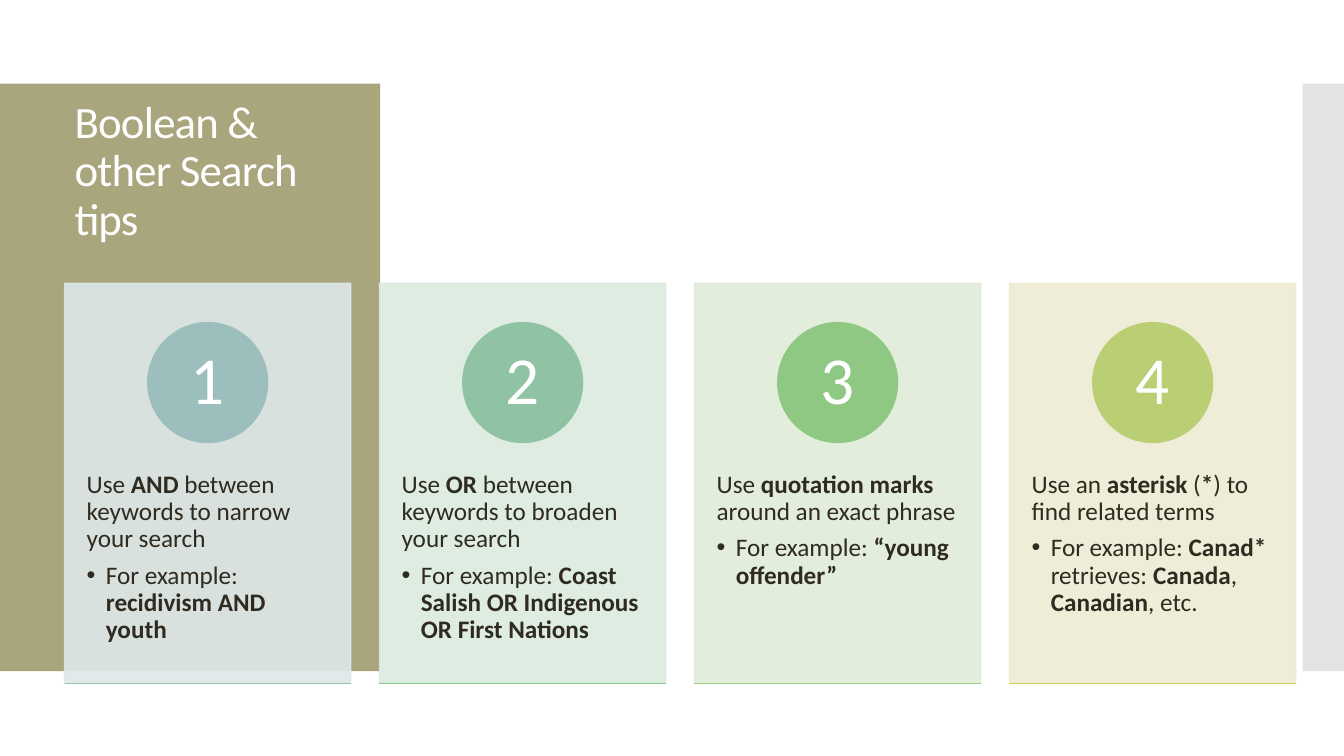
"""Build a slide of four numbered search tips beside a coloured title band."""
from lxml.etree import SubElement
from pptx import Presentation
from pptx.dml.color import RGBColor
from pptx.enum.shapes import MSO_CONNECTOR, MSO_SHAPE
from pptx.enum.text import MSO_ANCHOR, MSO_AUTO_SIZE, PP_ALIGN
from pptx.oxml.ns import qn
from pptx.util import Inches, Pt


def paint(shape, tint, alpha=100, edge=0.85):
    """Fill and outline a shape in one colour."""
    shape.shadow.inherit = False
    shape.fill.solid()
    shape.fill.fore_color.rgb = RGBColor.from_string(tint)
    if edge:
        shape.line.color.rgb = RGBColor.from_string(tint)
        shape.line.width = Pt(edge)
    else:
        shape.line.fill.background()
    if alpha < 100:
        for node in shape.element.spPr.iter(qn("a:srgbClr")):
            SubElement(node, qn("a:alpha"), val=str(alpha * 1000))


def write(para, text, look, tint):
    """Add runs to a paragraph; parts between underscores are bold."""
    para.line_spacing = 0.9
    for order, part in enumerate(text.split("_")):
        run = para.add_run()
        run.text = part
        for key, value in look.items():
            setattr(run.font, key, value)
        run.font.bold = order % 2 == 1
        run.font.color.rgb = RGBColor.from_string(tint)


deck = Presentation()
deck.slide_width, deck.slide_height = Inches(13.33), Inches(7.5)
slide = deck.slides.add_slide(deck.slide_layouts[5])
shapes = slide.shapes

head_look = {"name": "Calibri", "size": Pt(32)}
body_look = {"name": "Calibri", "size": Pt(18)}
mark_look = {"name": "Calibri", "size": Pt(48)}
body_box = {"word_wrap": True, "margin_left": Inches(0.22), "margin_right": Inches(0.22),
            "margin_top": Inches(0.36), "margin_bottom": Inches(0.36)}
mark_box = {"word_wrap": False, "vertical_anchor": MSO_ANCHOR.MIDDLE,
            "margin_top": Inches(0.01), "margin_bottom": Inches(0.01)}
head_box = {"word_wrap": True, "vertical_anchor": MSO_ANCHOR.MIDDLE,
            "auto_size": MSO_AUTO_SIZE.NONE}

for left, wide, tint, alpha in [(0, 3.77, "A9A57C", 100), (12.92, 0.41, "C8C8C8", 50)]:
    band = shapes.add_shape(MSO_SHAPE.RECTANGLE, Inches(left), Inches(0.83),
                            Inches(wide), Inches(5.83))
    paint(band, tint, alpha, 0)

title = shapes.title
shapes.element.append(title.element)
place = {"left": 0.64, "top": 0.9, "width": 2.53, "height": 1.62}
for key, value in place.items():
    setattr(title, key, Inches(value))
for key, value in head_box.items():
    setattr(title.text_frame, key, value)
head = title.text_frame.paragraphs[0]
head.alignment = PP_ALIGN.LEFT
write(head, "Boolean & other Search tips", head_look, "FFFEFF")
head.runs[0].font.element.set("spc", "-60") if hasattr(head.runs[0].font, "element") else \
    head.runs[0]._r.get_or_add_rPr().set("spc", "-60")

tips = [
    ("DEE8E8", "9CBEBD", "96C0B3", "Use _AND_ between keywords to narrow your search",
     "For example: _recidivism AND youth_"),
    ("DBEADF", "8FC3A3", "89C58E", "Use _OR_ between keywords to broaden your search",
     "For example: _Coast Salish OR Indigenous OR First Nations_"),
    ("E0ECD8", "8FC882", "A2CB7B", "Use _quotation marks _around an exact phrase",
     "For example: _“young offender”_"),
    ("EEECD4", "BACF73", "D2CB6C", "Use an _asterisk_ (_*_) to find related terms",
     "For example: _Canad* _retrieves: _Canada_, _Canadian_, etc."),
]
edge, top, wide, high, disc = 0.64, 2.81, 2.84, 3.97, 1.19
step = wide * 1.1

for col, (pale, tint, rule, lead, case) in enumerate(tips):
    left = edge + col * step
    card = shapes.add_shape(MSO_SHAPE.RECTANGLE, Inches(left), Inches(top),
                            Inches(wide), Inches(high))
    paint(card, pale, 90)

    note = shapes.add_textbox(Inches(left), Inches(4.32), Inches(wide), Inches(2.38))
    frame = note.text_frame
    for key, value in body_box.items():
        setattr(frame, key, value)
    first, item = frame.paragraphs[0], frame.add_paragraph()
    first.space_after, item.space_after = Pt(6.3), Pt(2.7)
    item.level = 1
    props = item._p.get_or_add_pPr()
    props.set("marL", str(Inches(0.19)))
    props.set("indent", str(-Inches(0.19)))
    SubElement(props, qn("a:buFont"), typeface="Arial")
    SubElement(props, qn("a:buChar"), char="•")
    write(first, lead, body_look, "2F2B20")
    write(item, case, body_look, "2F2B20")

    mark = shapes.add_shape(MSO_SHAPE.OVAL, Inches(left + (wide - disc) / 2),
                            Inches(3.2), Inches(disc), Inches(disc))
    paint(mark, tint)
    for key, value in mark_box.items():
        setattr(mark.text_frame, key, value)
    digit = mark.text_frame.paragraphs[0]
    digit.alignment = PP_ALIGN.CENTER
    write(digit, str(col + 1), mark_look, "FFFFFF")

    base = shapes.add_connector(MSO_CONNECTOR.STRAIGHT, Inches(left), Inches(top + high),
                                Inches(left + wide), Inches(top + high))
    base.line.color.rgb = RGBColor.from_string(rule)
    base.line.width = Pt(0.85)
    SubElement(base.element.spPr, qn("a:effectLst"))

deck.save("out.pptx")
